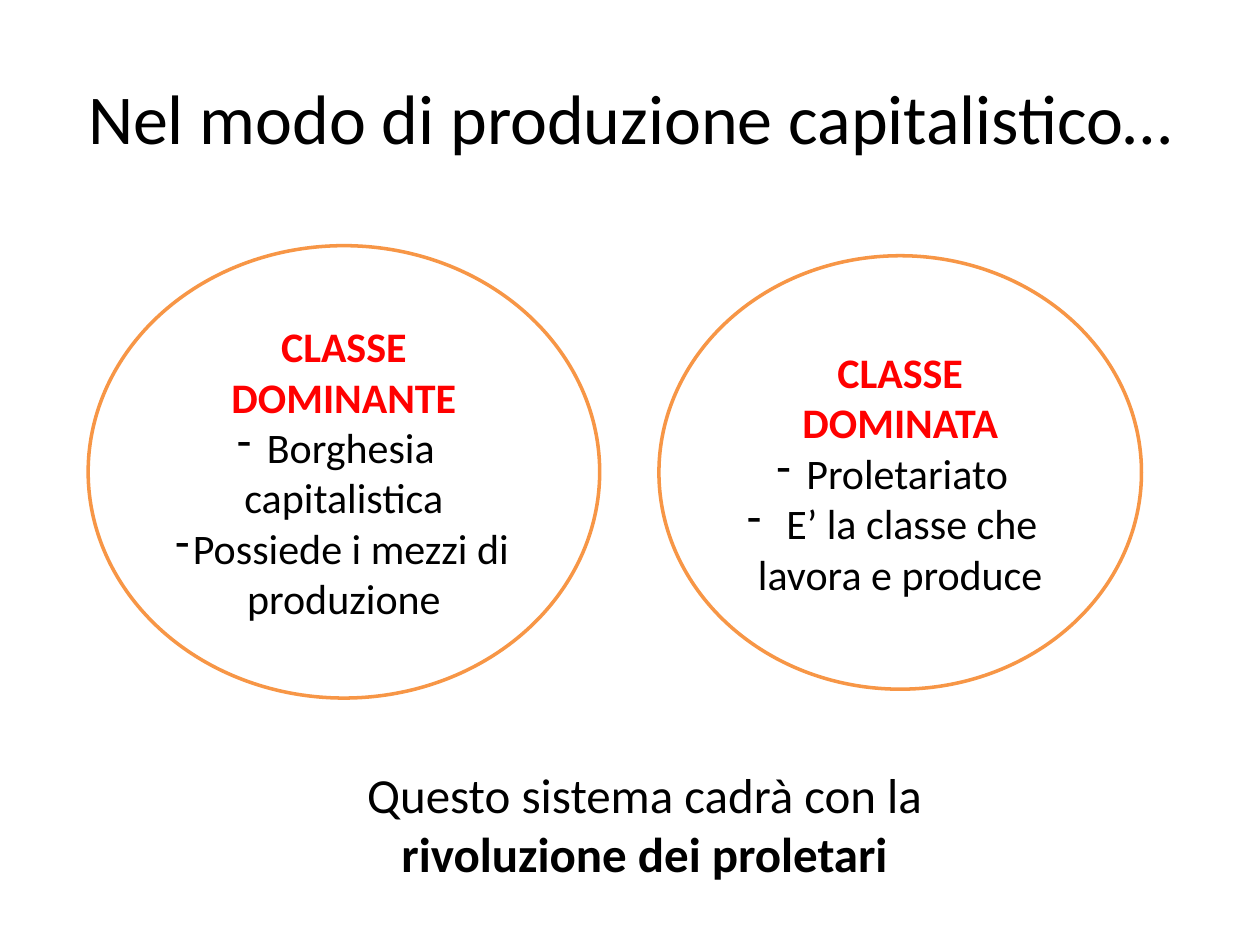
from dataclasses import dataclass

from lxml.etree import SubElement
from pptx import Presentation
from pptx.dml.color import RGBColor
from pptx.enum.shapes import MSO_SHAPE
from pptx.enum.text import MSO_ANCHOR, PP_ALIGN
from pptx.oxml.ns import qn
from pptx.util import Inches, Pt


@dataclass(frozen=True)
class Theme:
    font: str = "Calibri"
    ink: RGBColor = RGBColor(0, 0, 0)
    accent: RGBColor = RGBColor(0xFF, 0, 0)
    outline: RGBColor = RGBColor(0xF7, 0x96, 0x46)
    paper: RGBColor = RGBColor(0xFF, 0xFF, 0xFF)
    title_size: Pt = Pt(40)
    class_size: Pt = Pt(24)
    closing_size: Pt = Pt(28)
    outline_width: Pt = Pt(2)


THEME = Theme()


def style(paragraph, size, color=THEME.ink, bold=False):
    paragraph.alignment = PP_ALIGN.CENTER
    font = paragraph.font
    font.name, font.size, font.bold = THEME.font, size, bold
    font.color.rgb = color


def add_dash(paragraph):
    properties = paragraph._p.get_or_add_pPr()
    bullet_font = SubElement(properties, qn("a:buFontTx"))
    bullet = SubElement(properties, qn("a:buChar"), char="-")
    for element in (bullet, bullet_font):
        properties.insert(0, element)


def add_title(slide, box, wording):
    frame = slide.shapes.add_textbox(*map(Inches, box)).text_frame
    frame.word_wrap = True
    frame.vertical_anchor = MSO_ANCHOR.MIDDLE
    frame.text = wording
    style(frame.paragraphs[0], THEME.title_size)


def add_social_class(slide, box, heading, traits):
    circle = slide.shapes.add_shape(MSO_SHAPE.OVAL, *map(Inches, box))
    circle.shadow.inherit = False
    circle.fill.solid()
    circle.fill.fore_color.rgb = THEME.paper
    circle.line.color.rgb = THEME.outline
    circle.line.width = THEME.outline_width
    frame = circle.text_frame
    frame.word_wrap = True
    frame.vertical_anchor = MSO_ANCHOR.MIDDLE
    frame.text = heading
    style(frame.paragraphs[0], THEME.class_size, THEME.accent, bold=True)
    for trait in traits:
        paragraph = frame.add_paragraph()
        paragraph.text = trait
        style(paragraph, THEME.class_size)
        add_dash(paragraph)


def add_closing(slide, box, lead, emphasis):
    frame = slide.shapes.add_textbox(*map(Inches, box)).text_frame
    frame.word_wrap = True
    paragraph = frame.paragraphs[0]
    style(paragraph, THEME.closing_size)
    paragraph.add_run().text = lead
    outcome = paragraph.add_run()
    outcome.text = emphasis
    outcome.font.bold = True


def main():
    deck = Presentation()
    deck.slide_width, deck.slide_height = Inches(10), Inches(7.5)
    slide = deck.slides.add_slide(deck.slide_layouts[6])
    add_title(slide, (0.5, 0.3, 9, 1.25), "Nel modo di produzione capitalistico…")
    add_social_class(
        slide, (0.7, 1.95, 4.06, 3.59), "CLASSE DOMINANTE",
        ["Borghesia capitalistica", "Possiede i mezzi di produzione"],
    )
    add_social_class(
        slide, (5.23, 2.03, 3.83, 3.44), "CLASSE DOMINATA",
        ["Proletariato", " E’ la classe che lavora e produce"],
    )
    add_closing(
        slide, (2.5, 6.02, 5.23, 1.04),
        "Questo sistema cadrà con la ", "rivoluzione dei proletari",
    )
    deck.save("out.pptx")


if __name__ == "__main__":
    main()
